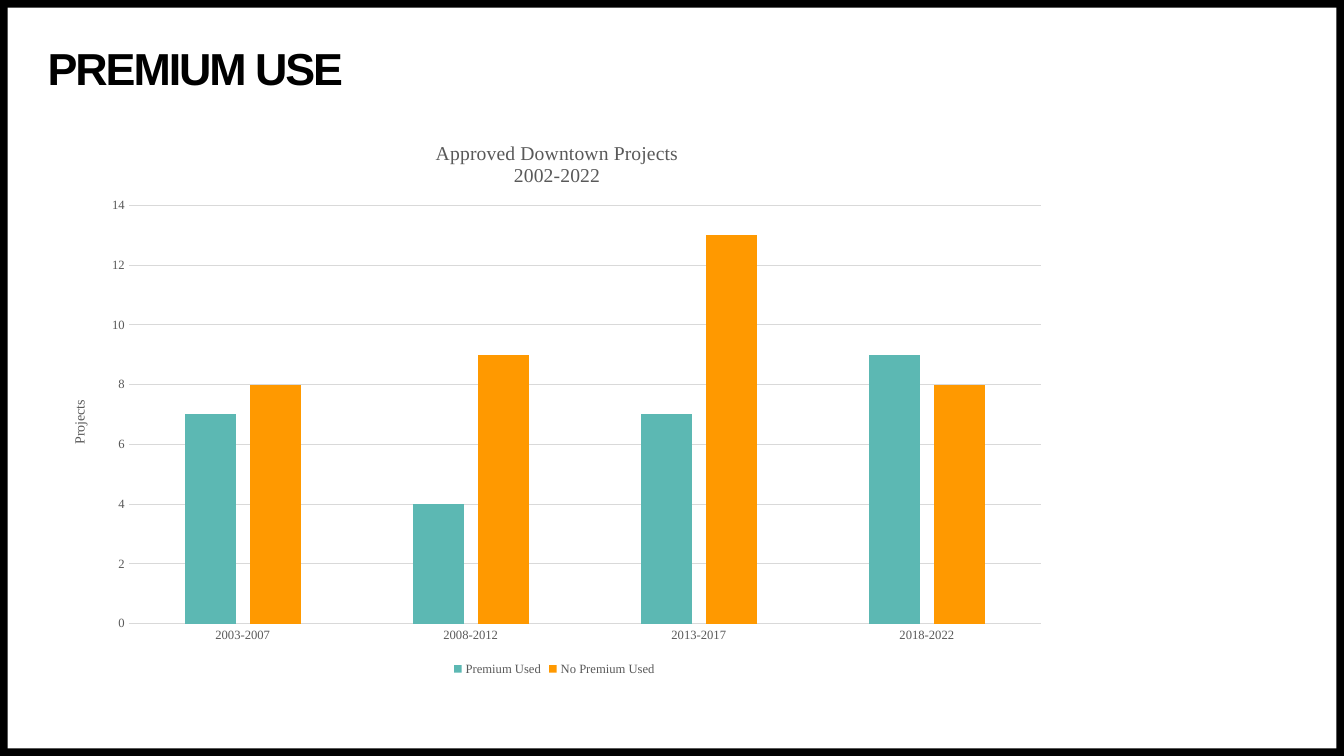
"""Build the premium use slide with its clustered column chart."""
import pptx
import pptx.chart.data
import pptx.dml.color
import pptx.enum.chart
import pptx.enum.shapes
import pptx.enum.text
import pptx.oxml
import pptx.oxml.ns
import pptx.util

Pt = pptx.util.Pt
COLORS = {"ink": "000000", "gray": "595959", "grid": "D9D9D9",
          "teal": "5CB8B3", "orange": "FF9900"}
WIDTH, HEIGHT = 960, 540
BORDER = 5.5
CATEGORIES = ["2003-2007", "2008-2012", "2013-2017", "2018-2022"]
SERIES = [("Premium Used", [7, 4, 7, 9], "teal"),
          ("No Premium Used", [8, 9, 13, 8], "orange")]


def rgb(name):
    """Return the named colour."""
    return pptx.dml.color.RGBColor.from_string(COLORS[name])


def set_attrs(obj, values):
    """Set each attribute in values on obj."""
    for key, value in values.items():
        setattr(obj, key, value)


def format_font(font, color, **values):
    """Apply a solid colour and format values to a font."""
    set_attrs(font, values)
    font.color.rgb = rgb(color)


def place(element, index, **fractions):
    """Give a chart part a manual layout in fractions of the chart."""
    for old in element.findall(pptx.oxml.ns.qn("c:layout")):
        element.remove(old)
    target = '<c:layoutTarget val="inner"/>' if "w" in fractions else ""
    modes = "".join(f'<c:{k}Mode val="edge"/>' for k in ("x", "y"))
    values = "".join(f'<c:{k} val="{v}"/>' for k, v in fractions.items())
    element.insert(index, pptx.oxml.parse_xml(
        f'<c:layout {pptx.oxml.ns.nsdecls("c")}><c:manualLayout>'
        f'{target}{modes}{values}</c:manualLayout></c:layout>'))


def add_border(s, x, y, w, h):
    """Draw four bars along the edges of the box."""
    bars = [(x, y, w, BORDER), (x, y + h - BORDER, w, BORDER),
            (x, y, BORDER, h), (x + w - BORDER, y, BORDER, h)]
    for bar in bars:
        sp = s.shapes.add_shape(pptx.enum.shapes.MSO_SHAPE.RECTANGLE,
                                *map(Pt, bar))
        sp.shadow.inherit = False
        sp.fill.solid()
        sp.fill.fore_color.rgb = rgb("ink")
        sp.line.fill.background()


def add_title(s, x, y, w, h):
    """Place and format the slide title."""
    sp = s.shapes.title
    set_attrs(sp, dict(left=Pt(x), top=Pt(y), width=Pt(w), height=Pt(h)))
    tf = sp.text_frame
    set_attrs(tf, dict(margin_left=0, margin_top=0, margin_right=0,
                       margin_bottom=0, word_wrap=True,
                       auto_size=pptx.enum.text.MSO_AUTO_SIZE.NONE,
                       vertical_anchor=pptx.enum.text.MSO_ANCHOR.MIDDLE))
    p = tf.paragraphs[0]
    set_attrs(p, dict(alignment=pptx.enum.text.PP_ALIGN.LEFT,
                      line_spacing=0.9))
    r = p.add_run()
    r.text = "PREMIUM USE"
    format_font(r.font, "ink", name="Arial", size=Pt(32), bold=True)
    r.font._element.set("spc", "-150")


def fill_chart_title(title, text, size):
    """Write a chart or axis title, one paragraph per line."""
    title.text_frame.text = text
    for p in title.text_frame.paragraphs:
        for r in p.runs:
            format_font(r.font, "gray", name="Times New Roman",
                        size=Pt(size), bold=False)


def format_axes(chart):
    """Style both axes, the gridlines and the value axis title."""
    for axis in (chart.category_axis, chart.value_axis):
        axis.major_tick_mark = pptx.enum.chart.XL_TICK_MARK.NONE
        axis.minor_tick_mark = pptx.enum.chart.XL_TICK_MARK.NONE
        format_font(axis.tick_labels.font, "gray",
                    name="Times New Roman", size=Pt(9))
    axis = chart.value_axis
    set_attrs(axis, dict(minimum_scale=0, maximum_scale=14, major_unit=2,
                         has_major_gridlines=True))
    axis.format.line.fill.background()
    for line in (chart.category_axis.format.line,
                 axis.major_gridlines.format.line):
        line.width = Pt(0.75)
        line.color.rgb = rgb("grid")
    fill_chart_title(axis.axis_title, "Projects", 10)
    place(axis.axis_title._element, 1, x=0.02, y=0.5)


def add_projects_chart(s, x, y, w, h):
    """Add the approved projects column chart in the box."""
    data = pptx.chart.data.CategoryChartData()
    data.categories = CATEGORIES
    for name, values, _ in SERIES:
        data.add_series(name, values)
    chart = s.shapes.add_chart(
        pptx.enum.chart.XL_CHART_TYPE.COLUMN_CLUSTERED,
        *map(Pt, (x, y, w, h)), data).chart
    format_font(chart.font, "ink", name="Times New Roman", size=Pt(10))
    fill_chart_title(chart.chart_title,
                     "Approved Downtown Projects\n2002-2022", 14)
    place(chart.chart_title._element, 1, x=0.38, y=0.04)
    format_axes(chart)
    plot = chart.plots[0]
    set_attrs(plot, dict(gap_width=219, overlap=-27,
                         vary_by_categories=False))
    for series, (_, _, color) in zip(plot.series, SERIES):
        series.format.fill.solid()
        series.format.fill.fore_color.rgb = rgb(color)
    place(plot._element.getparent(), 0, x=0.08, y=0.16, w=0.9, h=0.74)
    chart.has_legend = True
    set_attrs(chart.legend, dict(
        position=pptx.enum.chart.XL_LEGEND_POSITION.BOTTOM,
        include_in_layout=False))
    format_font(chart.legend.font, "gray", name="Times New Roman", size=Pt(9))


def main():
    """Build and save the presentation."""
    prs = pptx.Presentation()
    set_attrs(prs, dict(slide_width=Pt(WIDTH), slide_height=Pt(HEIGHT)))
    s = prs.slides.add_slide(prs.slide_layouts.get_by_name("Title Only"))
    add_border(s, 0, 0, WIDTH, HEIGHT)
    add_title(s, 34, 34, 724, 34)
    add_projects_chart(s, 34, 82, 724, 404)
    prs.save("out.pptx")


if __name__ == "__main__":
    main()
